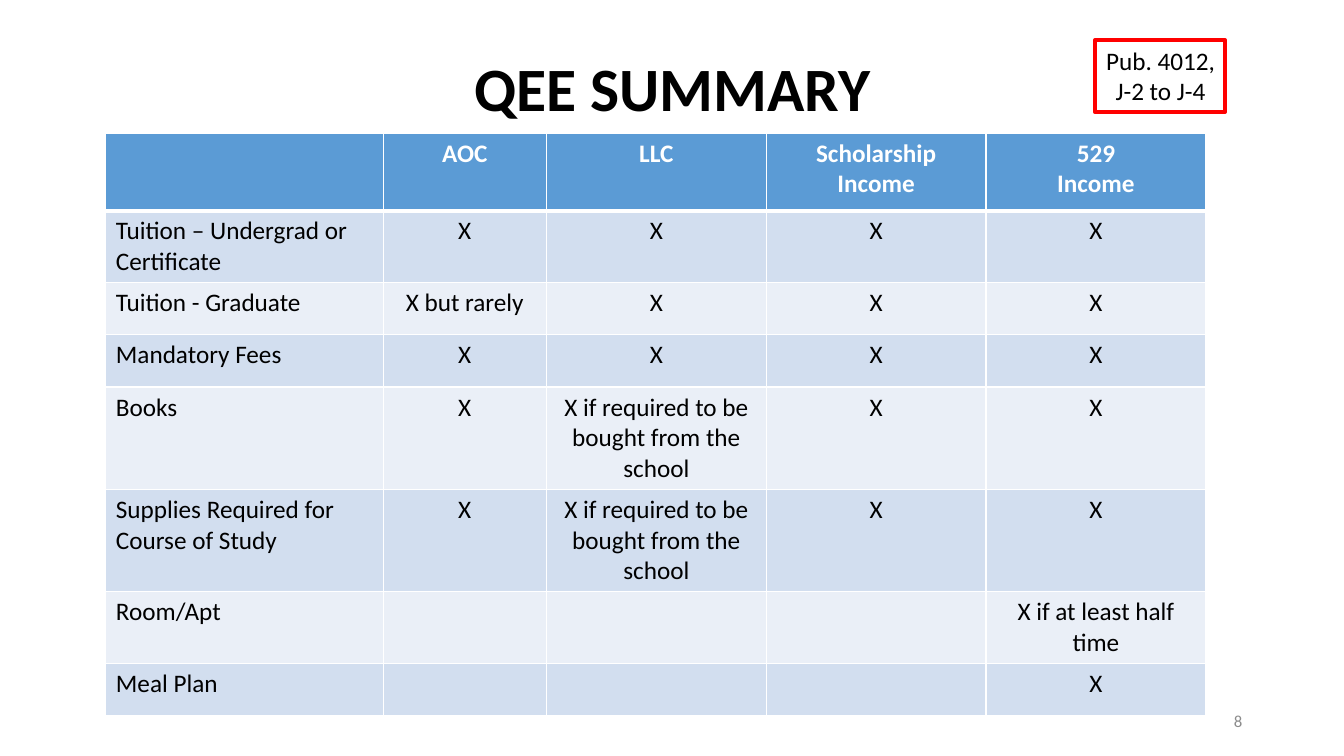
import pptx
import pptx.util
import pptx.dml.color
import pptx.enum.shapes
import pptx.enum.text
import pptx.oxml
import pptx.oxml.ns

Inches, Pt = pptx.util.Inches, pptx.util.Pt
ALIGN = pptx.enum.text.PP_ALIGN
ANCHOR = pptx.enum.text.MSO_ANCHOR

COLUMNS = [2.75, 1.62, 2.18, 2.18, 2.18]
HEADER_HEIGHT, ROW_HEIGHT = 0.77, 0.52
SCHOOL = "X if required to be bought from the school"
ROWS = [
    ["", "AOC", "LLC", "Scholarship Income", "529\nIncome"],
    ["Tuition – Undergrad or Certificate", "X", "X", "X", "X"],
    ["Tuition - Graduate", "X but rarely", "X", "X", "X"],
    ["Mandatory Fees", "X", "X", "X", "X"],
    ["Books", "X", SCHOOL, "X", "X"],
    ["Supplies Required for Course of Study", "X", SCHOOL, "X", "X"],
    ["Room/Apt", "", "", "", "X if at least half time"],
    ["Meal Plan", "", "", "", "X"],
]


def rgb(value):
    return pptx.dml.color.RGBColor.from_string(value)


class SlideBuilder:
    """Hold the style and current slide, and add each kind of element."""

    font = "Calibri"
    header, bands, border = "5B9BD5", ("EAEFF7", "D2DEEF"), "FFFFFF"

    def __init__(self, prs):
        self.s = prs.slides.add_slide(prs.slide_layouts[5])

    def fill_text(self, tf, text, align=ALIGN.CENTER, color="000000", spacing=None, **fmt):
        tf.text = text
        for p in tf.paragraphs:
            p.alignment = align
            p.line_spacing = spacing
            for r in p.runs:
                r.font.color.rgb = rgb(color)
                for name, value in {"name": self.font, "size": Pt(18), "bold": False, **fmt}.items():
                    setattr(r.font, name, value)

    def frame(self, tf, anchor):
        values = {"word_wrap": True, "auto_size": pptx.enum.text.MSO_AUTO_SIZE.NONE,
                  "vertical_anchor": anchor}
        for name, value in values.items():
            setattr(tf, name, value)

    def title(self, text, box):
        sp = self.s.shapes.title
        for name, value in zip(("left", "top", "width", "height"), box):
            setattr(sp, name, Inches(value))
        self.frame(sp.text_frame, ANCHOR.MIDDLE)
        self.fill_text(sp.text_frame, text, size=Pt(44), bold=True, spacing=0.9)

    def text(self, text, box, anchor=ANCHOR.TOP, **fmt):
        sp = self.s.shapes.add_textbox(*map(Inches, box))
        self.frame(sp.text_frame, anchor)
        self.fill_text(sp.text_frame, text, **fmt)

    def outline(self, box, color, width):
        sp = self.s.shapes.add_shape(pptx.enum.shapes.MSO_SHAPE.RECTANGLE, *map(Inches, box))
        sp.shadow.inherit = False
        sp.fill.background()
        sp.line.color.rgb = rgb(color)
        sp.line.width = Pt(width)

    def borders(self, cell, widths):
        tc_pr = cell._tc.get_or_add_tcPr()
        for i, (side, width) in enumerate(widths.items()):
            tc_pr.insert(i, pptx.oxml.parse_xml(
                f'<a:ln{side} {pptx.oxml.ns.nsdecls("a")} w="{Pt(width)}"><a:solidFill>'
                f'<a:srgbClr val="{self.border}"/></a:solidFill></a:ln{side}>'))

    def table(self, rows, left, top):
        height = HEADER_HEIGHT + ROW_HEIGHT * (len(rows) - 1)
        table = self.s.shapes.add_table(len(rows), len(COLUMNS), Inches(left), Inches(top),
                                        Inches(sum(COLUMNS)), Inches(height)).table
        for column, width in zip(table.columns, COLUMNS):
            column.width = Inches(width)
        for i, row in enumerate(rows):
            head = i == 0
            table.rows[i].height = Inches(HEADER_HEIGHT if head else ROW_HEIGHT)
            for j, text in enumerate(row):
                cell = table.cell(i, j)
                cell.fill.solid()
                cell.fill.fore_color.rgb = rgb(self.header if head else self.bands[i % 2])
                self.borders(cell, {"L": 1, "R": 1, "T": 3 if i == 1 else 1, "B": 3 if head else 1})
                self.fill_text(cell.text_frame, text, ALIGN.CENTER if head or j else ALIGN.LEFT,
                               "FFFFFF" if head else "000000", bold=head)


def main():
    prs = pptx.Presentation()
    prs.slide_width, prs.slide_height = Inches(13.33), Inches(7.5)
    b = SlideBuilder(prs)
    b.title("QEE SUMMARY", (0.92, 0.4, 11.5, 1.01))
    b.text("8", (9.42, 6.95, 3, 0.4), ANCHOR.MIDDLE, align=ALIGN.RIGHT, color="8C8C8C", size=Pt(12))
    b.table(ROWS, 1.05, 1.32)
    b.text("Pub. 4012, J-2 to J-4", (10.8, 0.4, 1.42, 0.71))
    b.outline((10.86, 0.4, 1.29, 0.71), "FF0000", 3)
    prs.save("out.pptx")


if __name__ == "__main__":
    main()
